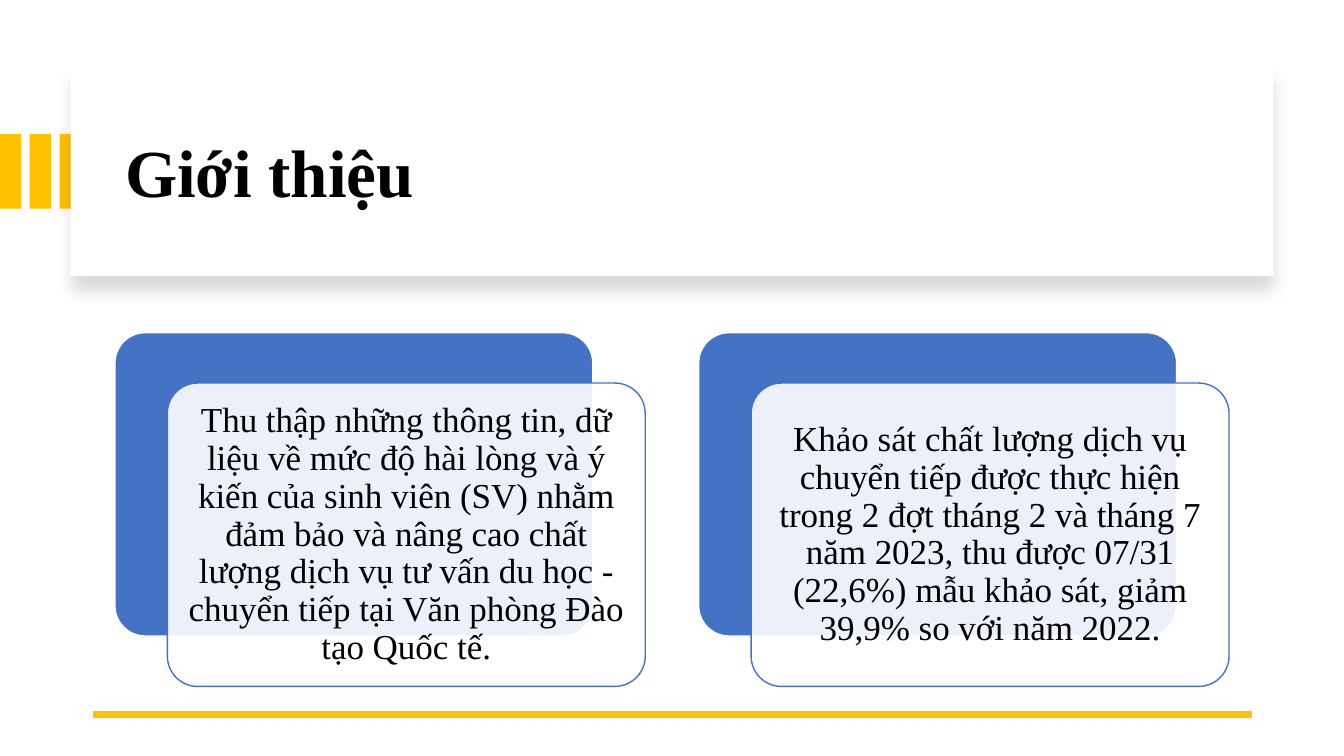
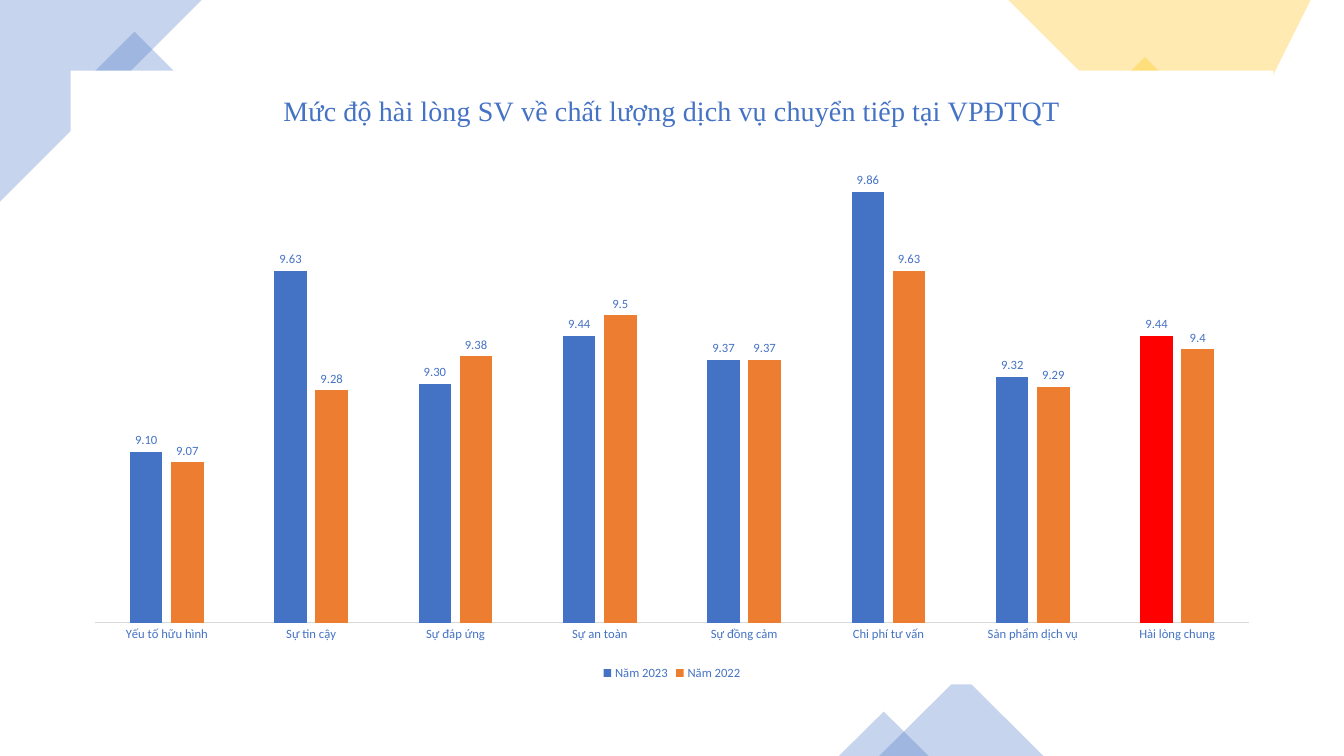
from dataclasses import dataclass

from lxml import etree
from pptx import Presentation
from pptx import util as u
from pptx.chart import data as cd
from pptx.dml import color as col
from pptx.enum import chart as ce
from pptx.enum import shapes as es
from pptx.enum import text as et
from pptx.oxml import ns, parse_xml

BLUE, GOLD, WHITE, BLACK = "4472C4", "FFC000", "FFFFFF", "000000"
ORANGE, RED, GREY = "ED7D31", "FF0000", "D9D9D9"
SERIF, SANS = "Times New Roman", "Calibri"
KIND = es.MSO_SHAPE


@dataclass
class Card:
    left: float
    words: str


@dataclass
class Piece:
    kind: KIND
    box: tuple[float, float, float, float]
    fill: str
    turn: float = 0


@dataclass
class Bars:
    name: str
    vals: list[float]
    fill: str
    fmt: str


CARDS = [
    Card(1.14, "Thu thập những thông tin, dữ liệu về mức độ hài lòng và ý kiến của "
               "sinh viên (SV) nhằm đảm bảo và nâng cao chất lượng dịch vụ tư vấn du "
               "học - chuyển tiếp tại Văn phòng Đào tạo Quốc tế."),
    Card(6.93, "Khảo sát chất lượng dịch vụ chuyển tiếp được thực hiện trong 2 đợt "
               "tháng 2 và tháng 7 năm 2023, thu được 07/31 (22,6%) mẫu khảo sát, "
               "giảm 39,9% so với năm 2022."),
]
CORNERS = [
    ([(0, 0), (1.53, 0), (1.83, 0.3), (0.41, 1.71), (0, 1.3)], BLUE),
    ([(13.33, 0), (10.23, 0), (11.93, 1.62), (13.33, 0.28)], GOLD),
]
PIECES = [
    Piece(KIND.RECTANGLE, (0.98, 0.46, 0.71, 0.71), BLUE, 315),
    Piece(KIND.RECTANGLE, (10.98, 0.72, 0.75, 0.75), GOLD, 315),
    Piece(KIND.ISOSCELES_TRIANGLE, (8.72, 6.69, 1.63, 0.81), BLUE),
    Piece(KIND.ISOSCELES_TRIANGLE, (8.32, 7.06, 0.89, 0.44), BLUE),
]
TOPICS = ["Yếu tố hữu hình", "Sự tin cậy", "Sự đáp ứng", "Sự an toàn",
          "Sự đồng cảm", "Chi phí tư vấn", "Sản phẩm dịch vụ", "Hài lòng chung"]
YEARS = [
    Bars("Năm 2023", [9.1, 9.63, 9.3, 9.44, 9.37, 9.86, 9.32, 9.44], BLUE, "0.00"),
    Bars("Năm 2022", [9.07, 9.28, 9.38, 9.5, 9.37, 9.63, 9.29, 9.4], ORANGE, "General"),
]


def rgb(tone: str) -> col.RGBColor:
    return col.RGBColor.from_string(tone)


def paint(shape, fill: str, alpha: int = 100, line: str | None = None) -> None:
    """Set fill, opacity in percent and outline; drop the theme shadow."""
    shape.shadow.inherit = False
    shape.fill.solid()
    shape.fill.fore_color.rgb = rgb(fill)
    if alpha < 100:
        tone = shape._element.spPr.find(".//" + ns.qn("a:srgbClr"))
        etree.SubElement(tone, ns.qn("a:alpha"), val=str(alpha * 1000))
    if line:
        shape.line.color.rgb = rgb(line)
        shape.line.width = u.Pt(1)
    else:
        shape.line.fill.background()


def add(slide, kind: KIND, box: tuple, fill: str, alpha: int = 100,
        line: str | None = None):
    shape = slide.shapes.add_shape(kind, *map(u.Inches, box))
    paint(shape, fill, alpha, line)
    return shape


def style(font, size: float, tone: str, face: str, bold: bool = False) -> None:
    font.size, font.name, font.bold = u.Pt(size), face, bold
    font.color.rgb = rgb(tone)


def write(frame, words: str, *, size: float, tone: str = BLACK, face: str = SERIF,
          bold: bool = False, align=et.PP_ALIGN.CENTER, space: float = 0.9) -> None:
    para = frame.paragraphs[0]
    para.alignment, para.line_spacing = align, space
    run = para.add_run()
    run.text = words
    style(run.font, size, tone, face, bold)


def cast(shape) -> None:
    """Give the shape a soft shadow that falls straight down."""
    glow = shape._element.spPr.find(ns.qn("a:effectLst"))
    drop = etree.SubElement(glow, ns.qn("a:outerShdw"), blurRad=str(u.Pt(11)),
                            dist=str(u.Pt(10)), dir="5400000", algn="t",
                            rotWithShape="0")
    tone = etree.SubElement(drop, ns.qn("a:srgbClr"), val=BLACK)
    etree.SubElement(tone, ns.qn("a:alpha"), val="15000")


def rule(slide, start: tuple, end: tuple) -> None:
    line = slide.shapes.add_connector(es.MSO_CONNECTOR.STRAIGHT,
                                      *map(u.Inches, start + end))
    line.line.color.rgb = rgb(GOLD)
    line.line.width = u.Pt(4.5)
    etree.SubElement(line._element.spPr, ns.qn("a:effectLst"))


def draw_card(slide, card: Card) -> None:
    size = (4.74, 3.01)
    back = add(slide, KIND.ROUNDED_RECTANGLE, (card.left, 3.3, *size), BLUE, line=WHITE)
    front = add(slide, KIND.ROUNDED_RECTANGLE, (card.left + 0.52, 3.8, *size),
                WHITE, 90, BLUE)
    for shape in (back, front):
        shape.adjustments[0] = 0.1
    frame = front.text_frame
    frame.word_wrap = True
    frame.vertical_anchor = et.MSO_ANCHOR.MIDDLE
    frame.margin_left = frame.margin_right = u.Inches(0.1)
    frame.margin_top = frame.margin_bottom = u.Inches(0.1)
    write(frame, card.words, size=25)


def intro(deck) -> None:
    slide = deck.slides.add_slide(deck.slide_layouts[5])
    for i in range(3):
        add(slide, KIND.RECTANGLE, (0.59 * i / 2, 1.33, 0.21, 0.74), GOLD)
    panel = add(slide, KIND.RECTANGLE, (0.7, 0.67, 11.93, 2.07), WHITE)
    cast(panel)
    title = slide.shapes.title
    title.left, title.top, title.width, title.height = map(
        u.Inches, (1.14, 0.89, 11.13, 1.7))
    title.text_frame.auto_size = et.MSO_AUTO_SIZE.NONE
    title.text_frame.vertical_anchor = et.MSO_ANCHOR.MIDDLE
    write(title.text_frame, "Giới thiệu", size=48, bold=True, align=et.PP_ALIGN.LEFT)
    panel._element.addnext(title._element)
    rule(slide, (12.42, 7.09), (0.92, 7.09))
    for card in CARDS:
        draw_card(slide, card)


def frame_plot(chart) -> None:
    """Fill the chart area with white and fix the inner plot's place."""
    root = chart._chartSpace
    root.find(ns.qn("c:chart")).addnext(parse_xml(
        f'<c:spPr {ns.nsdecls("c", "a")}><a:solidFill><a:srgbClr val="{WHITE}"/>'
        '</a:solidFill><a:ln><a:noFill/></a:ln></c:spPr>'))
    plot = root.find(".//" + ns.qn("c:plotArea"))
    for old in plot.findall(ns.qn("c:layout")):
        plot.remove(old)
    place = {"x": 0.02, "y": 0.12, "w": 0.96, "h": 0.78}
    rows = "".join(f'<c:{key}Mode val="edge"/>' for key in "xy")
    rows += "".join(f'<c:{key} val="{val}"/>' for key, val in place.items())
    plot.insert(0, parse_xml(
        f'<c:layout {ns.nsdecls("c")}><c:manualLayout>'
        f'<c:layoutTarget val="inner"/>{rows}</c:manualLayout></c:layout>'))


def draw_chart(slide) -> None:
    data = cd.CategoryChartData()
    data.categories = TOPICS
    for year in YEARS:
        data.add_series(year.name, year.vals, year.fmt)
    chart = slide.shapes.add_chart(
        ce.XL_CHART_TYPE.COLUMN_CLUSTERED,
        *map(u.Inches, (0.7, 0.7, 11.93, 6.09)), data).chart
    style(chart.font, 10, BLUE, SANS)
    chart.has_title = True
    write(chart.chart_title.text_frame,
          "Mức độ hài lòng SV về chất lượng dịch vụ chuyển tiếp tại VPĐTQT",
          size=20, tone=BLUE, space=1.0)
    chart.chart_title.include_in_layout = False
    chart.has_legend = True
    chart.legend.position = ce.XL_LEGEND_POSITION.BOTTOM
    chart.legend.include_in_layout = False
    style(chart.legend.font, 9, BLUE, SANS)

    cat, val = chart.category_axis, chart.value_axis
    cat.major_tick_mark = cat.minor_tick_mark = ce.XL_TICK_MARK.NONE
    cat.format.line.color.rgb = rgb(GREY)
    cat.format.line.width = u.Pt(0.75)
    style(cat.tick_labels.font, 9, BLUE, SANS)
    val.visible = val.has_major_gridlines = False
    val.minimum_scale, val.maximum_scale = 8.6, 10

    plot = chart.plots[0]
    plot.gap_width, plot.overlap, plot.vary_by_categories = 219, -27, False
    for year, bars in zip(YEARS, plot.series):
        bars.format.fill.solid()
        bars.format.fill.fore_color.rgb = rgb(year.fill)
        bars.invert_if_negative = False
        tags = bars.data_labels
        tags.show_value = True
        tags.position = ce.XL_LABEL_POSITION.OUTSIDE_END
        tags.number_format, tags.number_format_is_linked = year.fmt, False
        style(tags.font, 9, BLUE, SANS)
    total = plot.series[0].points[len(TOPICS) - 1].format.fill
    total.solid()
    total.fore_color.rgb = rgb(RED)
    frame_plot(chart)


def result(deck) -> None:
    slide = deck.slides.add_slide(deck.slide_layouts[6])
    for spots, fill in CORNERS:
        path = slide.shapes.build_freeform(*spots[0], scale=u.Inches(1))
        path.add_line_segments(spots[1:], close=True)
        paint(path.convert_to_shape(), fill, 30)
    for piece in PIECES:
        add(slide, piece.kind, piece.box, piece.fill, 30).rotation = piece.turn
    draw_chart(slide)


def main() -> None:
    deck = Presentation()
    deck.slide_width, deck.slide_height = u.Inches(13.33), u.Inches(7.5)
    intro(deck)
    result(deck)
    deck.save("out.pptx")


if __name__ == "__main__":
    main()
